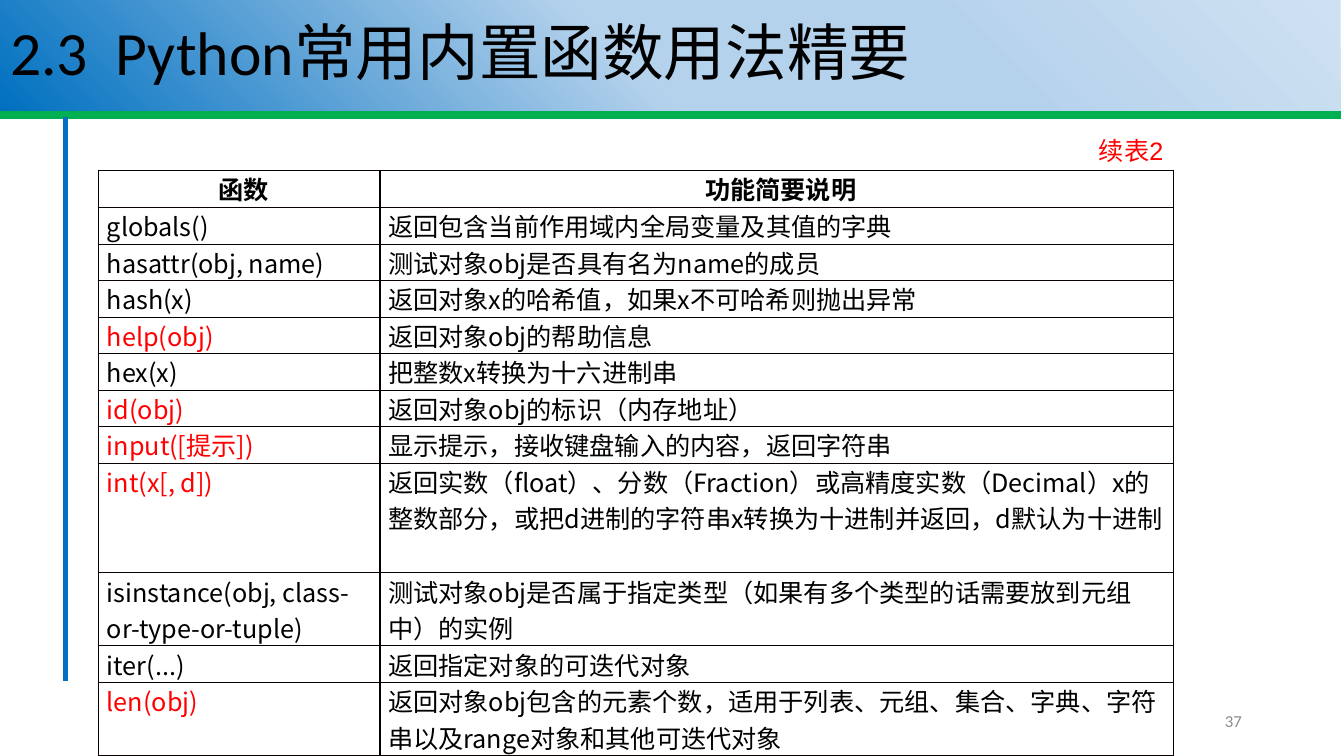
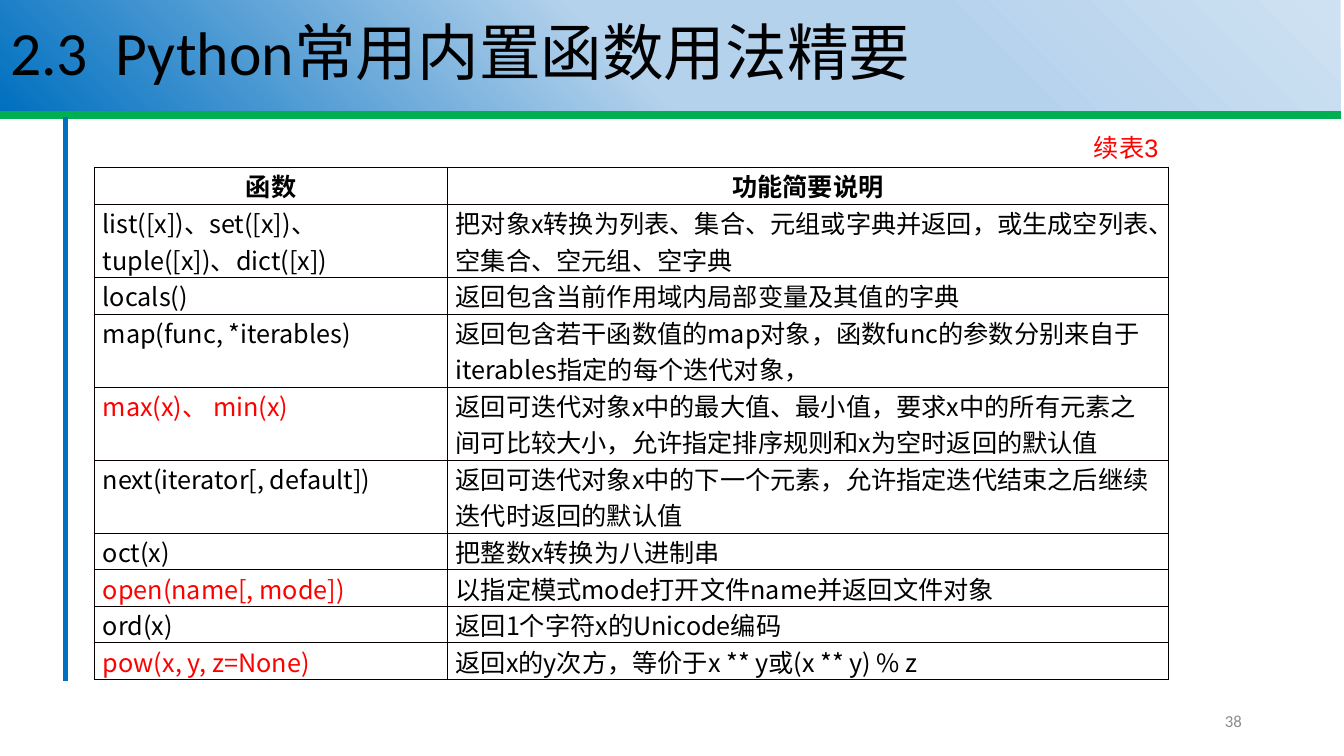
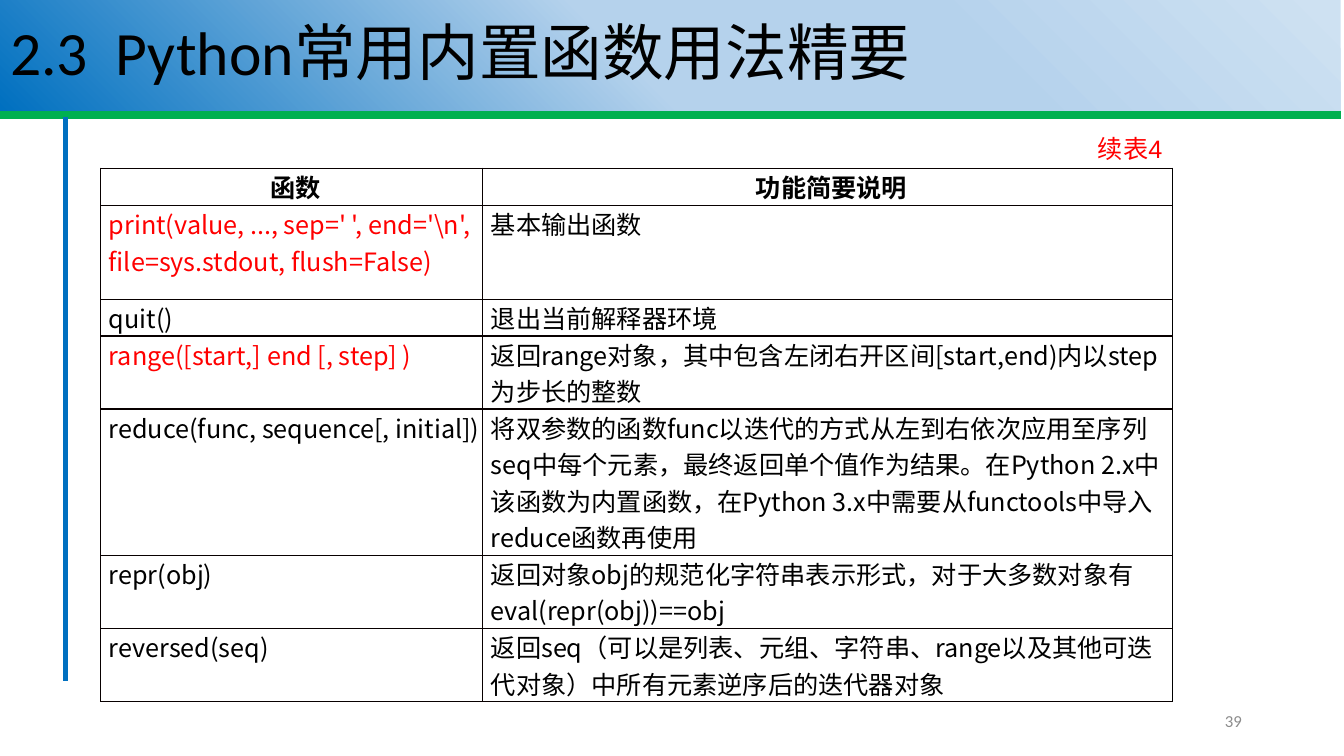
import pptx
import pptx.util
import pptx.dml.color
import pptx.enum.text
import pptx.oxml
import pptx.oxml.ns
import lxml.etree

PX = 9144  # one hundredth of an inch
Pt = pptx.util.Pt
LINE = Pt(26.1)  # height of one line of table text
ALIGN = pptx.enum.text.PP_ALIGN
ANCHOR = pptx.enum.text.MSO_ANCHOR
FIT = pptx.enum.text.MSO_AUTO_SIZE
qn = pptx.oxml.ns.qn
NS = pptx.oxml.ns.nsdecls("a")
CJK = "Noto Sans CJK SC"
HEX = {"black": "000000", "edge": "080000", "red": "FF0000", "gray": "8C8C8C",
       "green": "00B050", "blue": "0070C0", "pale": "CEE1F2", "sky": "B5D2EC"}


def text(frame, words, size=18, font=CJK, color="black", bold=False,
         align=ALIGN.LEFT, anchor=ANCHOR.TOP, fit=None, space=None):
    frame.word_wrap = True
    frame.vertical_anchor = anchor
    if fit is not None:
        frame.auto_size = fit
    para = frame.paragraphs[0]
    para.alignment = align
    para.line_spacing = space
    run = para.add_run()
    run.text = words
    run.font.size = Pt(size)
    run.font.name = font
    run.font.bold = bold
    run.font.color.rgb = pptx.dml.color.RGBColor.from_string(HEX[color])
    east = lxml.etree.SubElement(run.font._element, qn("a:ea"))
    east.set("typeface", CJK)


def edge(cell, side, width, color):
    props = cell._tc.get_or_add_tcPr()
    props.append(pptx.oxml.parse_xml(
        f'<a:{side} {NS} w="{Pt(width)}"><a:solidFill><a:srgbClr val="{HEX[color]}"/>'
        f'</a:solidFill></a:{side}>'))


# Shared parts
TITLE = "2.3  Python常用内置函数用法精要"
HEAD = (1.02, "black", "函数", "功能简要说明")
RULES = [((0, 114, 1330, 114), "green", 5.25), ((65, 116, 65, 676), "blue", 3.75)]
STOPS = [(1, "pale"), (29, "sky"), (53, "sky"), (100, "blue")]
BAND = (f'<a:gradFill {NS} rotWithShape="1"><a:gsLst>'
        + "".join(f'<a:gs pos="{pos * 1000}"><a:srgbClr val="{HEX[name]}"/></a:gs>'
                  for pos, name in STOPS)
        + '</a:gsLst><a:lin ang="8100000" scaled="1"/></a:gradFill>')

# Each page: table place, column widths, right inset, rows (lines, color, name, use)
PAGES = [
    dict(no=37, mark="续表2", left=98, top=169, cols=(279, 787), inset=0, rows=[
        (1, "black", "globals()", "返回包含当前作用域内全局变量及其值的字典"),
        (1, "black", "hasattr(obj, name)", "测试对象obj是否具有名为name的成员"),
        (1, "black", "hash(x)", "返回对象x的哈希值，如果x不可哈希则抛出异常"),
        (1, "red", "help(obj)", "返回对象obj的帮助信息"),
        (1, "black", "hex(x)", "把整数x转换为十六进制串"),
        (1, "red", "id(obj)", "返回对象obj的标识（内存地址）"),
        (1, "red", "input([提示])", "显示提示，接收键盘输入的内容，返回字符串"),
        (3, "red", "int(x[, d])",
         "返回实数（float）、分数（Fraction）或高精度实数（Decimal）x的整数部分，"
         "或把d进制的字符串x转换为十进制并返回，d默认为十进制"),
        (2, "black", "isinstance(obj, class-or-type-or-tuple)",
         "测试对象obj是否属于指定类型（如果有多个类型的话需要放到元组中）的实例"),
        (1, "black", "iter(...)", "返回指定对象的可迭代对象"),
        (2, "red", "len(obj)",
         "返回对象obj包含的元素个数，适用于列表、元组、集合、字典、字符串"
         "以及range对象和其他可迭代对象"),
    ]),
    dict(no=38, mark="续表3", left=94, top=166, cols=(350, 715), inset=8, rows=[
        (2, "black", "list([x])、set([x])、tuple([x])、dict([x])",
         "把对象x转换为列表、集合、元组或字典并返回，或生成空列表、空集合、空元组、空字典"),
        (1, "black", "locals()", "返回包含当前作用域内局部变量及其值的字典"),
        (2, "black", "map(func, *iterables)",
         "返回包含若干函数值的map对象，函数func的参数分别来自于iterables指定的每个迭代对象，"),
        (2, "red", "max(x)、 min(x)",
         "返回可迭代对象x中的最大值、最小值，要求x中的所有元素之间可比较大小，"
         "允许指定排序规则和x为空时返回的默认值"),
        (2, "black", "next(iterator[, default])",
         "返回可迭代对象x中的下一个元素，允许指定迭代结束之后继续迭代时返回的默认值"),
        (1, "black", "oct(x)", "把整数x转换为八进制串"),
        (1, "red", "open(name[, mode])", "以指定模式mode打开文件name并返回文件对象"),
        (1, "black", "ord(x)", "返回1个字符x的Unicode编码"),
        (1, "red", "pow(x, y, z=None)", "返回x的y次方，等价于x ** y或(x ** y) % z"),
    ]),
    dict(no=39, mark="续表4", left=100, top=167, cols=(379, 684), inset=0, rows=[
        (2.57, "red", "print(value, ..., sep=' ', end='\\n', file=sys.stdout, flush=False)",
         "基本输出函数"),
        (1, "black", "quit()", "退出当前解释器环境"),
        (2, "red", "range([start,] end [, step] )",
         "返回range对象，其中包含左闭右开区间[start,end)内以step为步长的整数"),
        (4, "black", "reduce(func, sequence[, initial])",
         "将双参数的函数func以迭代的方式从左到右依次应用至序列seq中每个元素，"
         "最终返回单个值作为结果。在Python 2.x中该函数为内置函数，"
         "在Python 3.x中需要从functools中导入reduce函数再使用"),
        (2, "black", "repr(obj)",
         "返回对象obj的规范化字符串表示形式，对于大多数对象有eval(repr(obj))==obj"),
        (2, "black", "reversed(seq)",
         "返回seq（可以是列表、元组、字符串、range以及其他可迭代对象）"
         "中所有元素逆序后的迭代器对象"),
    ]),
]

deck = pptx.Presentation()
deck.slide_height = 750 * PX
deck.slide_width = deck.slide_height * 16 // 9

for page in PAGES:
    slide = deck.slides.add_slide(deck.slide_layouts[5])
    shapes = slide.shapes

    # Title band
    title = shapes.title
    title.left, title.top, title.width, title.height = 0, 0, 1330 * PX, 110 * PX
    title._element.spPr.append(pptx.oxml.parse_xml(BAND))
    text(title.text_frame, TITLE, size=44, font="Calibri", anchor=ANCHOR.MIDDLE,
         fit=FIT.NONE, space=0.9)

    # Green and blue rules
    for ends, color, width in RULES:
        rule = shapes.add_connector(1, *(n * PX for n in ends))
        rule.line.color.rgb = pptx.dml.color.RGBColor.from_string(HEX[color])
        rule.line.width = Pt(width)
        lxml.etree.SubElement(rule._element.spPr, qn("a:effectLst"))

    # Page number
    box = shapes.add_textbox(942 * PX, 695 * PX, 300 * PX, 40 * PX)
    text(box.text_frame, str(page["no"]), size=12, font="Calibri", color="gray",
         align=ALIGN.RIGHT, anchor=ANCHOR.MIDDLE)

    # Function table
    rows = [HEAD] + page["rows"]
    wide, high = sum(page["cols"]), int(sum(row[0] for row in rows) * LINE)
    table = shapes.add_table(len(rows), 2, page["left"] * PX, page["top"] * PX,
                             wide * PX, high).table
    table.first_row = table.horz_banding = False
    for col, width in zip(table.columns, page["cols"]):
        col.width = width * PX
    for r, (lines, color, *words) in enumerate(rows):
        table.rows[r].height = int(lines * LINE)
        for c, word in enumerate(words):
            cell = table.cell(r, c)
            cell.margin_left, cell.margin_right = 8 * PX, page["inset"] * PX
            cell.margin_top = cell.margin_bottom = 0
            for side in ("lnL", "lnR", "lnT", "lnB"):
                last = side == "lnR" and c == 1
                edge(cell, side, 0.75 if last else 1, "black" if last else "edge")
            cell.fill.background()
            text(cell.text_frame, word, color="black" if c else color, bold=r == 0,
                 align=ALIGN.LEFT if r else ALIGN.CENTER)

    # Caption, flush with the table's right edge
    box = shapes.add_textbox((page["left"] + wide - 144) * PX, (page["top"] - 40) * PX,
                             144 * PX, 40 * PX)
    text(box.text_frame, page["mark"], font="Arial", color="red", align=ALIGN.RIGHT,
         fit=FIT.SHAPE_TO_FIT_TEXT)

deck.save("out.pptx")
